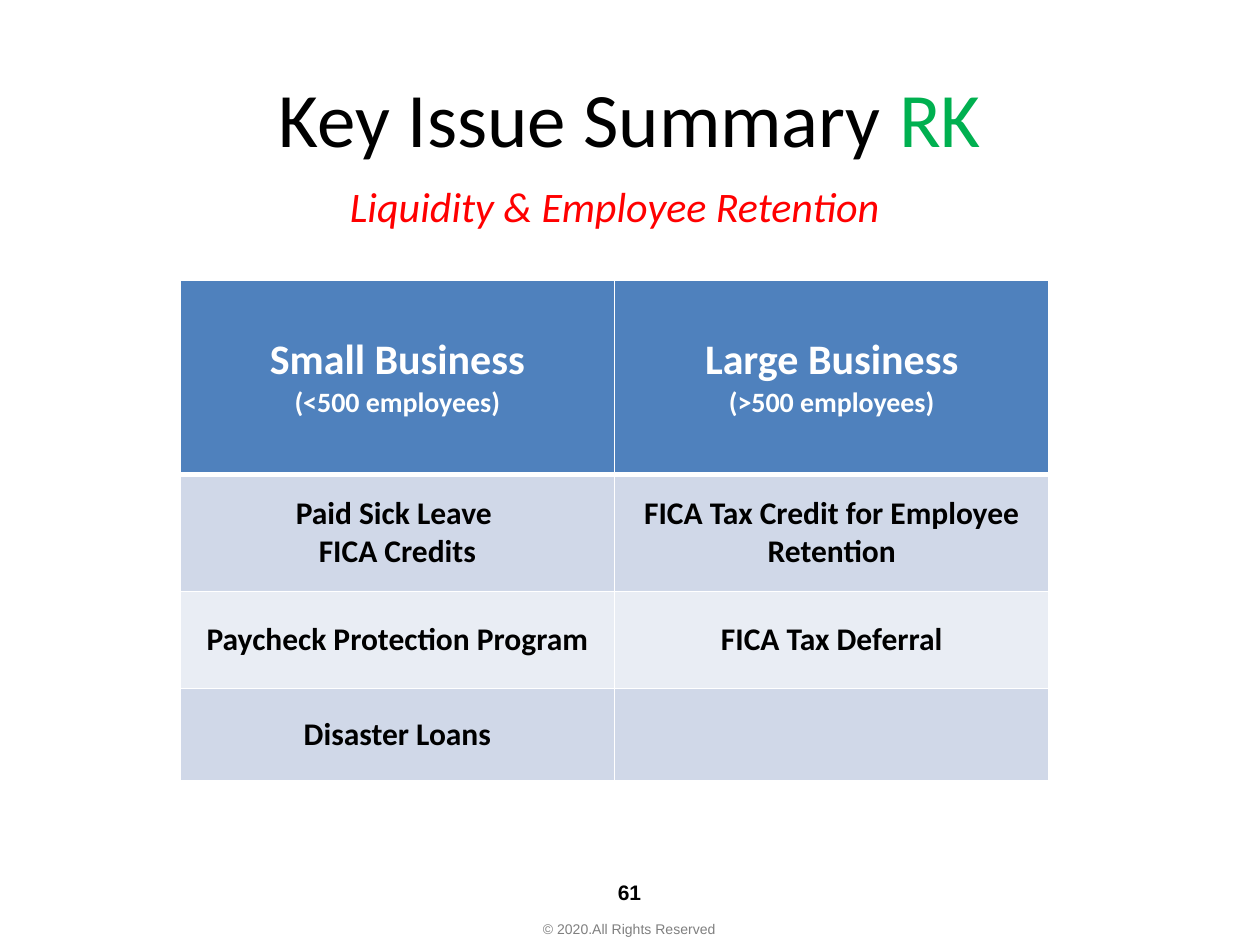
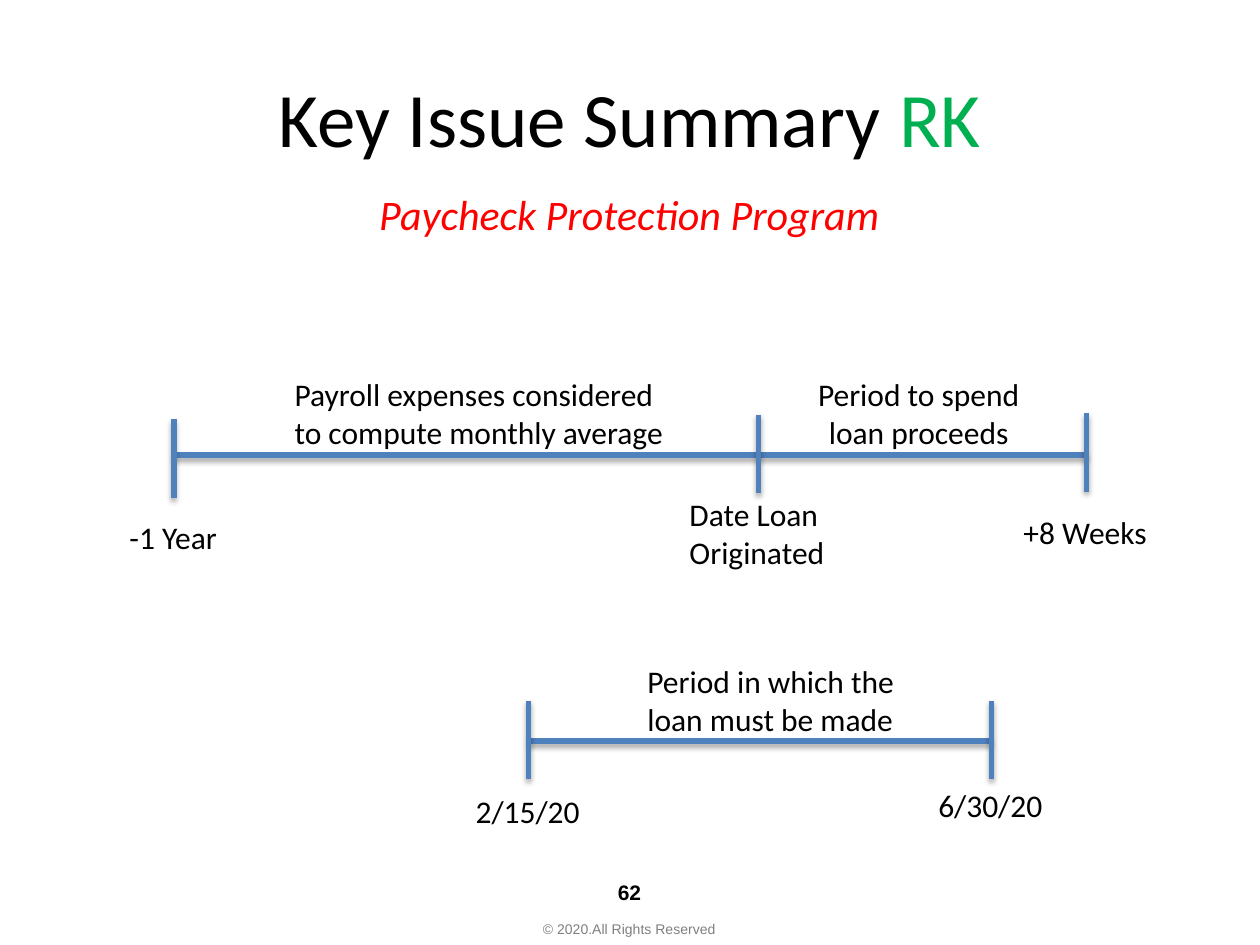
import pptx
import pptx.dml.color
import pptx.enum.shapes
import pptx.enum.text
import pptx.oxml
import pptx.oxml.ns
import pptx.util

Pt = pptx.util.Pt
RGBColor = pptx.dml.color.RGBColor
PP_ALIGN = pptx.enum.text.PP_ALIGN
MSO_ANCHOR = pptx.enum.text.MSO_ANCHOR
MSO_AUTO_SIZE = pptx.enum.text.MSO_AUTO_SIZE

BLACK = RGBColor(0x00, 0x00, 0x00)
WHITE = RGBColor(0xFF, 0xFF, 0xFF)
GREY = RGBColor(0x7F, 0x7F, 0x7F)
RED = RGBColor(0xFF, 0x00, 0x00)
GREEN = RGBColor(0x00, 0xB0, 0x50)
BLUE = RGBColor(0x4F, 0x81, 0xBD)
BAND_DARK = RGBColor(0xD0, 0xD8, 0xE8)
BAND_LIGHT = RGBColor(0xE9, 0xED, 0xF4)

TITLE = "Key Issue Summary "
PRESENTER = "RK"
COPYRIGHT = "© 2020.All Rights Reserved"

# page number, subtitle, subtitle box (left, top, width, height)
SUMMARY = ("61", "Liquidity & Employee Retention", (191, 99.4, 320.4, 36))
PROGRAM = ("62", "Paycheck Protection Program", (208, 104.4, 303, 36))

HEADINGS = [("Small Business", "(<500 employees)"), ("Large Business", "(>500 employees)")]
RELIEF_ROWS = [
    ("Paid Sick Leave \nFICA Credits", "FICA Tax Credit for Employee Retention"),
    ("Paycheck Protection Program", "FICA Tax Deferral"),
    ("Disaster Loans", ""),
]
TABLE_LEFT, TABLE_TOP, COLUMN_WIDTH = 103, 160, 248.2
ROW_HEIGHTS = [111, 67, 55.4, 52.6]

TICK_LENGTH = 45
TIMELINES = [
    {
        "axis": 260,
        # tick x, tick top, label, label top, label width
        "ticks": [
            (99.4, 239.6, "-1 Year", 292.5, 65),
            (433.4, 237, "Date Loan\nOriginated", 279.5, 93),
            (620.8, 236, "+8 Weeks", 289.5, 86),
        ],
        # label, centre x, top, width, alignment
        "periods": [
            ("Payroll expenses considered\nto compute monthly average",
             275, 211, 227.5, PP_ALIGN.LEFT),
            ("Period to spend \nloan proceeds ", 527, 211, 135.4, PP_ALIGN.CENTER),
        ],
    },
    {
        "axis": 423.4,
        "ticks": [
            (302.2, 400.4, "2/15/20", 449.3, 75),
            (566.6, 400.4, "6/30/20", 445.7, 75),
        ],
        "periods": [
            ("Period in which the\nloan must be made", 443.5, 375, 161.3, PP_ALIGN.LEFT),
        ],
    },
]


def style(paragraph, size, color, font="Calibri", bold=False, italic=False,
          alignment=PP_ALIGN.CENTER):
    paragraph.alignment = alignment
    for run in paragraph.runs:
        run.font.name = font
        run.font.size = Pt(size)
        run.font.bold = bold
        run.font.italic = italic
        run.font.color.rgb = color


def add_text(slide, text, box, size, color=BLACK, wrap=False, **look):
    shape = slide.shapes.add_textbox(*map(Pt, box))
    frame = shape.text_frame
    frame.text = text
    frame.word_wrap = wrap
    frame.auto_size = MSO_AUTO_SIZE.SHAPE_TO_FIT_TEXT
    for paragraph in frame.paragraphs:
        style(paragraph, size, color, **look)
    return shape


def add_framed_slide(presentation, page, subtitle, subtitle_box):
    """Add a slide with the shared title, subtitle and footer."""
    slide = presentation.slides.add_slide(presentation.slide_layouts[6])
    add_text(slide, COPYRIGHT, (303.1, 522.7, 114.5, 17), 8, GREY, font="Arial",
             alignment=PP_ALIGN.LEFT)
    add_text(slide, page, (332.7, 499, 54, 21.6), 12, wrap=True, font="Arial", bold=True)
    title = add_text(slide, TITLE, (36, 21.6, 648, 90), 44, wrap=True)
    title.text_frame.auto_size = MSO_AUTO_SIZE.NONE
    title.text_frame.vertical_anchor = MSO_ANCHOR.MIDDLE
    paragraph = title.text_frame.paragraphs[0]
    paragraph.add_run().text = PRESENTER
    style(paragraph, 44, BLACK)
    paragraph.runs[1].font.color.rgb = GREEN
    add_text(slide, subtitle, subtitle_box, 24, RED, italic=True)
    return slide


def set_borders(cell, **widths):
    """Draw white cell borders; widths are in points by side L, R, T, B."""
    properties = cell._tc.get_or_add_tcPr()
    for index, (side, width) in enumerate(widths.items()):
        properties.insert(index, pptx.oxml.parse_xml(
            f'<a:ln{side} {pptx.oxml.ns.nsdecls("a")} w="{Pt(width)}"><a:solidFill>'
            f'<a:srgbClr val="{WHITE}"/></a:solidFill></a:ln{side}>'))


def add_relief_table(slide):
    rows = [["\n".join(heading) for heading in HEADINGS]] + RELIEF_ROWS
    table = slide.shapes.add_table(
        len(rows), len(HEADINGS), Pt(TABLE_LEFT), Pt(TABLE_TOP),
        Pt(COLUMN_WIDTH * len(HEADINGS)), Pt(sum(ROW_HEIGHTS))).table
    for column in table.columns:
        column.width = Pt(COLUMN_WIDTH)
    for row_index, texts in enumerate(rows):
        is_heading = row_index == 0
        table.rows[row_index].height = Pt(ROW_HEIGHTS[row_index])
        band = BAND_DARK if row_index % 2 else BAND_LIGHT
        for column_index, text in enumerate(texts):
            cell = table.cell(row_index, column_index)
            cell.text = text
            cell.vertical_anchor = MSO_ANCHOR.MIDDLE
            cell.fill.solid()
            cell.fill.fore_color.rgb = BLUE if is_heading else band
            set_borders(cell, L=1, R=1, T=3 if row_index == 1 else 1, B=3 if is_heading else 1)
            for line_index, paragraph in enumerate(cell.text_frame.paragraphs):
                size = (24, 16)[line_index] if is_heading else 18
                style(paragraph, size, WHITE if is_heading else BLACK, bold=True)


def add_shadowed_line(slide, x1, y1, x2, y2):
    line = slide.shapes.add_connector(
        pptx.enum.shapes.MSO_CONNECTOR.STRAIGHT, Pt(x1), Pt(y1), Pt(x2), Pt(y2))
    line.line.color.rgb = BLUE
    line.line.width = Pt(3)
    line._element.spPr.append(pptx.oxml.parse_xml(
        f'<a:effectLst {pptx.oxml.ns.nsdecls("a")}>'
        f'<a:outerShdw blurRad="{Pt(3.1)}" dist="{Pt(1.8)}" dir="5400000" rotWithShape="0">'
        f'<a:srgbClr val="{BLACK}"><a:alpha val="35000"/></a:srgbClr>'
        '</a:outerShdw></a:effectLst>'))


def add_timeline(slide, axis, ticks, periods):
    add_shadowed_line(slide, ticks[0][0], axis, ticks[-1][0], axis)
    for x, top, *_ in ticks:
        add_shadowed_line(slide, x, top, x, top + TICK_LENGTH)
    tick_labels = [(text, x, top, width, PP_ALIGN.LEFT) for x, _, text, top, width in ticks]
    for text, centre, top, width, alignment in tick_labels + periods:
        height = 51 if "\n" in text else 29
        add_text(slide, text, (centre - width / 2, top, width, height), 18, alignment=alignment)


def main():
    presentation = pptx.Presentation()
    presentation.slide_width = Pt(720)
    presentation.slide_height = Pt(540)
    add_relief_table(add_framed_slide(presentation, *SUMMARY))
    program_slide = add_framed_slide(presentation, *PROGRAM)
    for timeline in TIMELINES:
        add_timeline(program_slide, **timeline)
    presentation.save("out.pptx")


if __name__ == "__main__":
    main()
